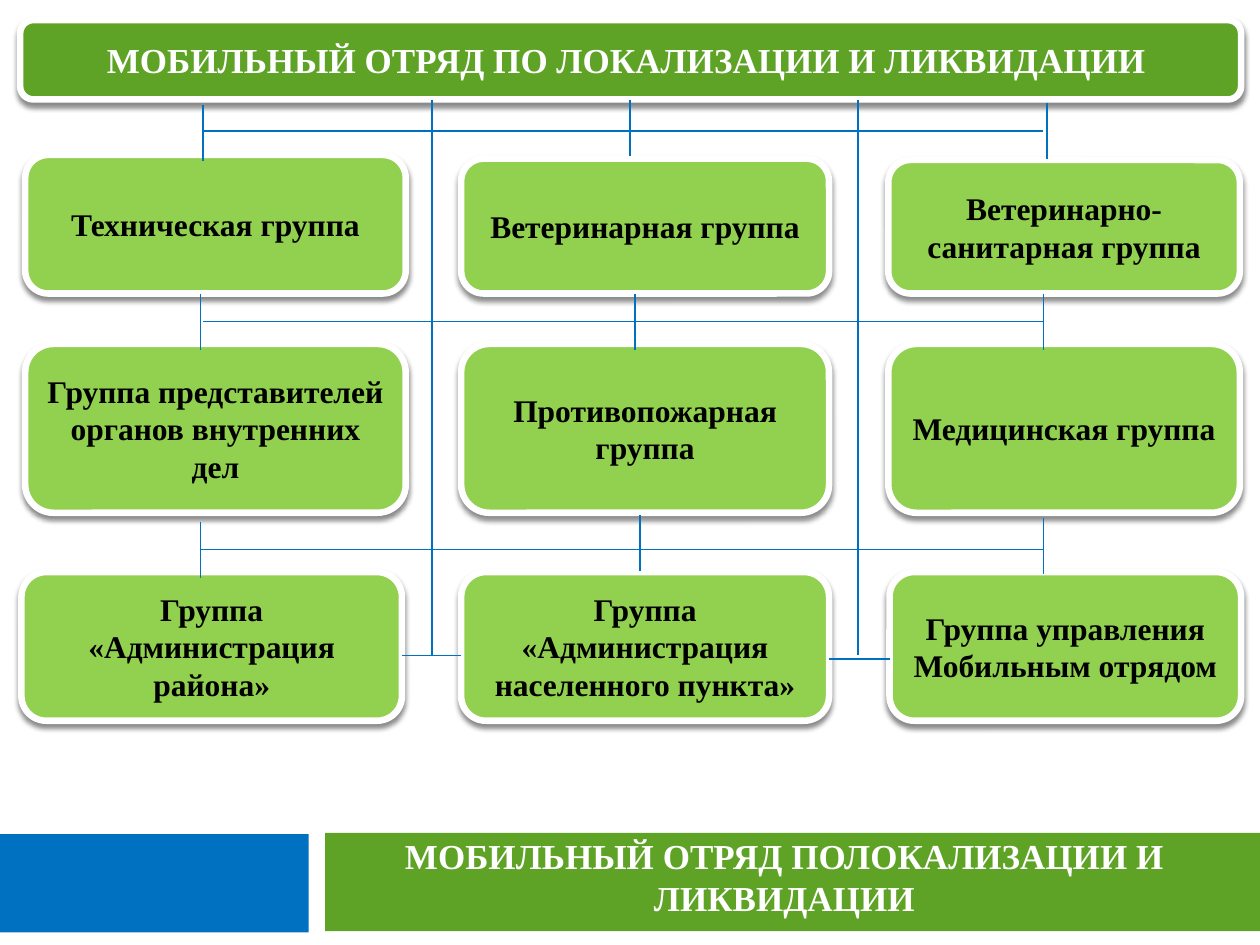
from lxml import etree
from pptx import Presentation
from pptx import util as u
from pptx.dml.color import RGBColor
from pptx.enum import shapes, text
from pptx.oxml import ns

COLORS = {"green": "5EA226", "lime": "92D050", "blue": "0070C0",
          "white": "FFFFFF", "black": "000000"}
COLUMNS, ROWS = 100, 75

HEADER = "МОБИЛЬНЫЙ ОТРЯД ПО ЛОКАЛИЗАЦИИ И ЛИКВИДАЦИИ "
FOOTER = "МОБИЛЬНЫЙ ОТРЯД ПОЛОКАЛИЗАЦИИ И ЛИКВИДАЦИИ"
GROUP_WIDTHS = (30.2, 29.2, 27.9)
GROUP_ROWS = [
    ((2, 36.6, 70.5), (12.3, 12.6, 12.7), 23.3,
     ("Техническая группа", "Ветеринарная группа", "Ветеринарно-санитарная группа")),
    ((2, 36.6, 70.5), (27.3, 27.3, 27.3), 40.7,
     ("Группа представителей органов внутренних дел", "Противопожарная группа",
      "Медицинская группа")),
    ((1.7, 36.6, 70.6), (45.4, 45.4, 45.4), 57.2,
     ("Группа «Администрация района»", "Группа «Администрация населенного пункта»",
      "Группа управления Мобильным отрядом")),
]
TRUNKS = (34.3, 68.1)
STUB_LENGTH = 4.45
STUBS = [(50, 7.9), (50.8, 40.9), (50.4, 23.3), (16.1, 8.3), (83.1, 8.2),
         (15.9, 23.3), (15.9, 41.4), (82.8, 23.3), (82.8, 41.1)]
CROSSBARS = [(16.1, 82.8, 10.4), (16.1, 82.8, 25.5), (15.9, 82.8, 43.6),
             (31.9, 36.6, 52), (65.8, 70.6, 52.3)]


class Chart:
    """Draws the styled elements of an organisation chart on a slide grid."""

    def __init__(self, deck):
        self.deck = deck
        self.page = deck.slides.add_slide(deck.slide_layouts[6])
        self.font = "Times New Roman"

    def color(self, name):
        return RGBColor.from_string(COLORS[name])

    def place(self, column, row):
        return (round(self.deck.slide_width * column / COLUMNS),
                round(self.deck.slide_height * row / ROWS))

    def area(self, left, top, width, height):
        return self.place(left, top) + self.place(width, height)

    def set_words(self, box, words, size, ink):
        frame = box.text_frame
        frame.word_wrap = True
        frame.vertical_anchor = text.MSO_ANCHOR.MIDDLE
        para = frame.paragraphs[0]
        para.text = words
        para.alignment = text.PP_ALIGN.CENTER
        para.font.name = self.font
        para.font.size = u.Pt(size)
        para.font.bold = True
        para.font.color.rgb = self.color(ink)

    def band(self, left, top, width, height, fill):
        box = self.page.shapes.add_shape(
            shapes.MSO_SHAPE.RECTANGLE, *self.area(left, top, width, height))
        box.shadow.inherit = False
        box.fill.solid()
        box.fill.fore_color.rgb = self.color(fill)
        box.line.fill.background()

    def label(self, left, top, width, height, words):
        box = self.page.shapes.add_textbox(*self.area(left, top, width, height))
        self.set_words(box, words, 20, "white")

    def card(self, left, top, width, height, words, size=18, fill="lime", ink="black"):
        box = self.page.shapes.add_shape(
            shapes.MSO_SHAPE.ROUNDED_RECTANGLE, *self.area(left, top, width, height))
        box.fill.solid()
        box.fill.fore_color.rgb = self.color(fill)
        box.line.color.rgb = self.color("white")
        box.line.width = u.Pt(3.75)
        self.drop_shadow(box)
        self.set_words(box, words, size, ink)

    def drop_shadow(self, box):
        box.shadow.inherit = False
        effects = box.element.spPr.find(ns.qn("a:effectLst"))
        shadow = etree.SubElement(
            effects, ns.qn("a:outerShdw"), blurRad=str(u.Pt(3)), dist=str(u.Pt(2.4)),
            dir="5400000", rotWithShape="0")
        tint = etree.SubElement(shadow, ns.qn("a:srgbClr"), val=COLORS["black"])
        etree.SubElement(tint, ns.qn("a:alpha"), val="45000")

    def link(self, left, top, right, bottom):
        line = self.page.shapes.add_connector(
            shapes.MSO_CONNECTOR.STRAIGHT, *self.place(left, top), *self.place(right, bottom))
        line.line.color.rgb = self.color("blue")
        line.line.width = u.Pt(0.79)
        etree.SubElement(line.element.spPr, ns.qn("a:effectLst"))


def main():
    deck = Presentation()
    deck.slide_width, deck.slide_height = u.Inches(10), u.Inches(7.5)
    chart = Chart(deck)

    chart.band(0, 66.2, 24.5, 7.8, "blue")
    chart.band(25.8, 66.1, 74.2, 7.8, "green")
    chart.label(25.6, 65.8, 73.3, 7.5, FOOTER)
    chart.card(1.6, 1.6, 96.9, 6.3, HEADER, 20, "green", "white")

    for lefts, tops, bottom, names in GROUP_ROWS:
        for left, top, width, name in zip(lefts, tops, GROUP_WIDTHS, names):
            chart.card(left, top, width, bottom - top, name)

    for column in TRUNKS:
        chart.link(column, 7.9, column, 52)
    for column, top in STUBS:
        chart.link(column, top, column, top + STUB_LENGTH)
    for left, right, row in CROSSBARS:
        chart.link(left, row, right, row)

    deck.save("out.pptx")


if __name__ == "__main__":
    main()
